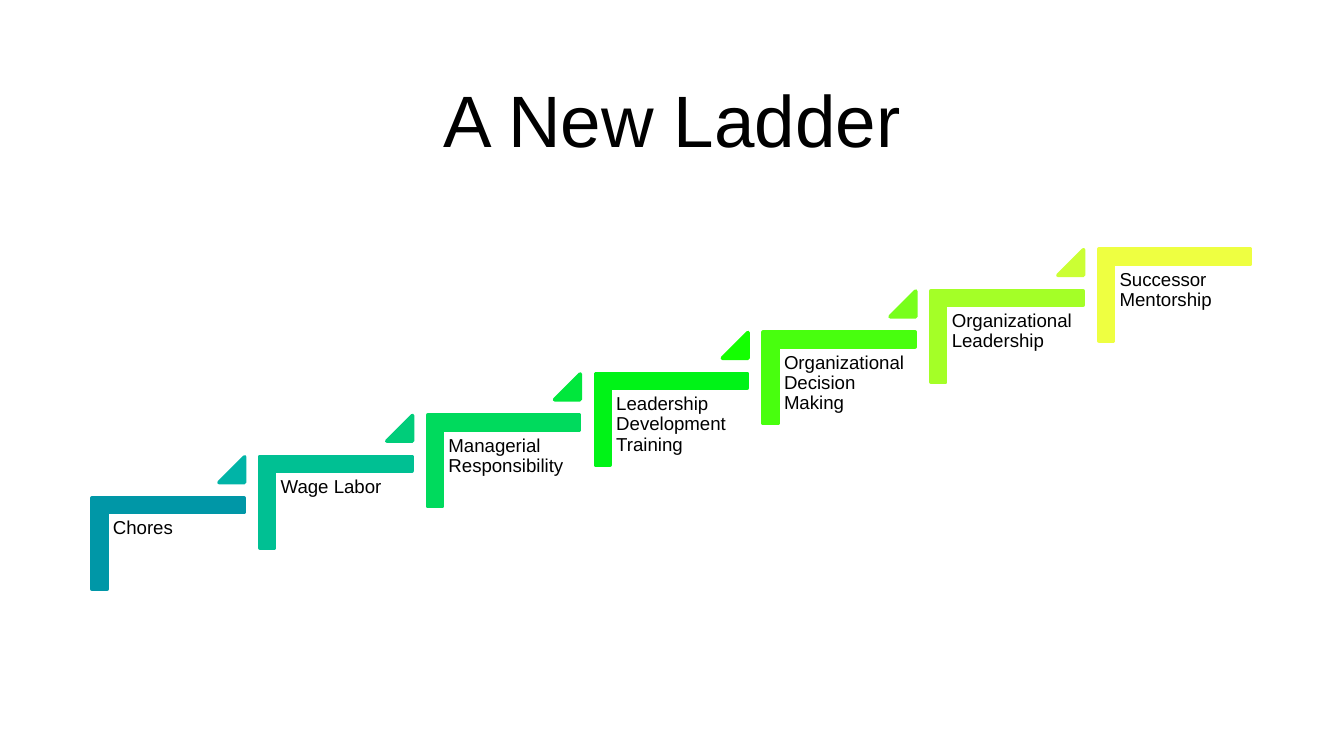
from pptx import Presentation
from pptx.dml.color import RGBColor as RGB
from pptx.enum.shapes import MSO_SHAPE as Shape
from pptx.enum.text import MSO_ANCHOR as Anchor, PP_ALIGN as Align
from pptx.util import Inches, Pt

# Content: label, step colour, colour of the arrow up to the next step
TITLE = "A New Ladder"
STEPS = [
    ("Chores", "teal", "aqua"),
    ("Wage Labor", "jade", "mint"),
    ("Managerial Responsibility", "green", "leaf"),
    ("Leadership Development Training", "neon", "grass"),
    ("Organizational Decision Making", "lime", "pear"),
    ("Organizational Leadership", "chart", "lemon"),
    ("Successor Mentorship", "yellow", None),
]
COLORS = {
    "ink": "000000",
    "teal": "0097A7", "aqua": "00B4A7", "jade": "00C093", "mint": "00CD7A",
    "green": "00DA5D", "leaf": "00E73C", "neon": "00F317", "grass": "14FF01",
    "lime": "48FF0E", "pear": "78FF1B", "chart": "A4FF27", "lemon": "CBFF34",
    "yellow": "EEFF41",
}

# Staircase: first and last corner, evenly spaced between
FIRST, LAST = (0.91, 3.48), (8.4, 1.63)
GAPS = len(STEPS) - 1
RUN, RISE = ((b - a) / GAPS for a, b in zip(FIRST, LAST))

# Parts of a step: offset from its corner shape, then size
CORNER = (0, 0, 0.68, 1.13)
LABEL = (-0.11, 0.34, 1.02, 0.89)
ARROW = (0.72, -0.08, 0.19, 0.19)

# Widescreen page, 16 to 9
deck = Presentation()
deck.slide_width = Inches(10)
deck.slide_height = deck.slide_width * 9 // 16
slide = deck.slides.add_slide(deck.slide_layouts[6])


def place(part, x, y):
    left, top, width, height = part
    return [Inches(v) for v in (x + left, y + top, width, height)]


def add_mark(kind, box, color, adjust):
    mark = slide.shapes.add_shape(kind, *box)
    mark.shadow.inherit = False
    for i, value in enumerate(adjust):
        mark.adjustments[i] = value
    tone = RGB.from_string(COLORS[color])
    mark.fill.solid()
    mark.fill.fore_color.rgb = tone
    mark.line.color.rgb = tone
    mark.line.width = Pt(2)
    return mark


def add_text(text, box, size, inset, align):
    frame = slide.shapes.add_textbox(*box).text_frame
    frame.word_wrap = True
    frame.vertical_anchor = Anchor.TOP
    frame.margin_left = frame.margin_right = Inches(inset)
    frame.margin_top = frame.margin_bottom = Inches(inset)
    frame.text = text
    para = frame.paragraphs[0]
    para.alignment = align
    font = para.runs[0].font
    font.name, font.size = "Arial", Pt(size)
    font.color.rgb = RGB.from_string(COLORS["ink"])
    return para


# Title
add_text(TITLE, place((0.69, 0.46, 8.62, 0.93), 0, 0), 39, 0.1, Align.CENTER)

# Steps, rising to the right
for n, (label, color, arrow) in enumerate(STEPS):
    x, y = FIRST[0] + n * RUN, FIRST[1] + n * RISE
    corner = add_mark(Shape.CORNER, place(CORNER, x, y), color, (0.16, 0.16))
    corner.rotation = 90
    para = add_text(label, place(LABEL, x, y), 10, 0.04, Align.LEFT)
    para.line_spacing = 0.9
    if arrow:
        add_mark(Shape.ISOSCELES_TRIANGLE, place(ARROW, x, y), arrow, (1,))

deck.save("out.pptx")
